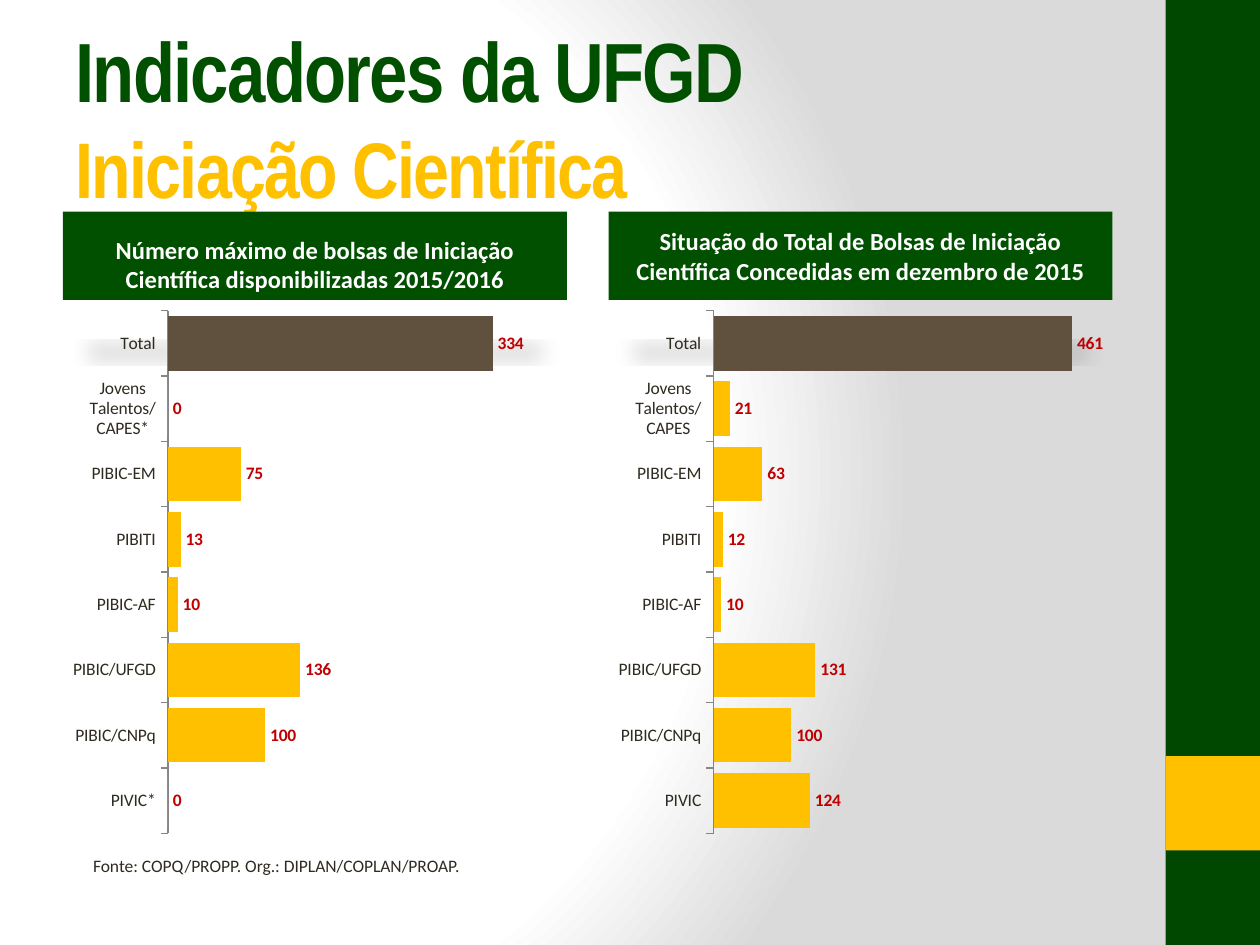
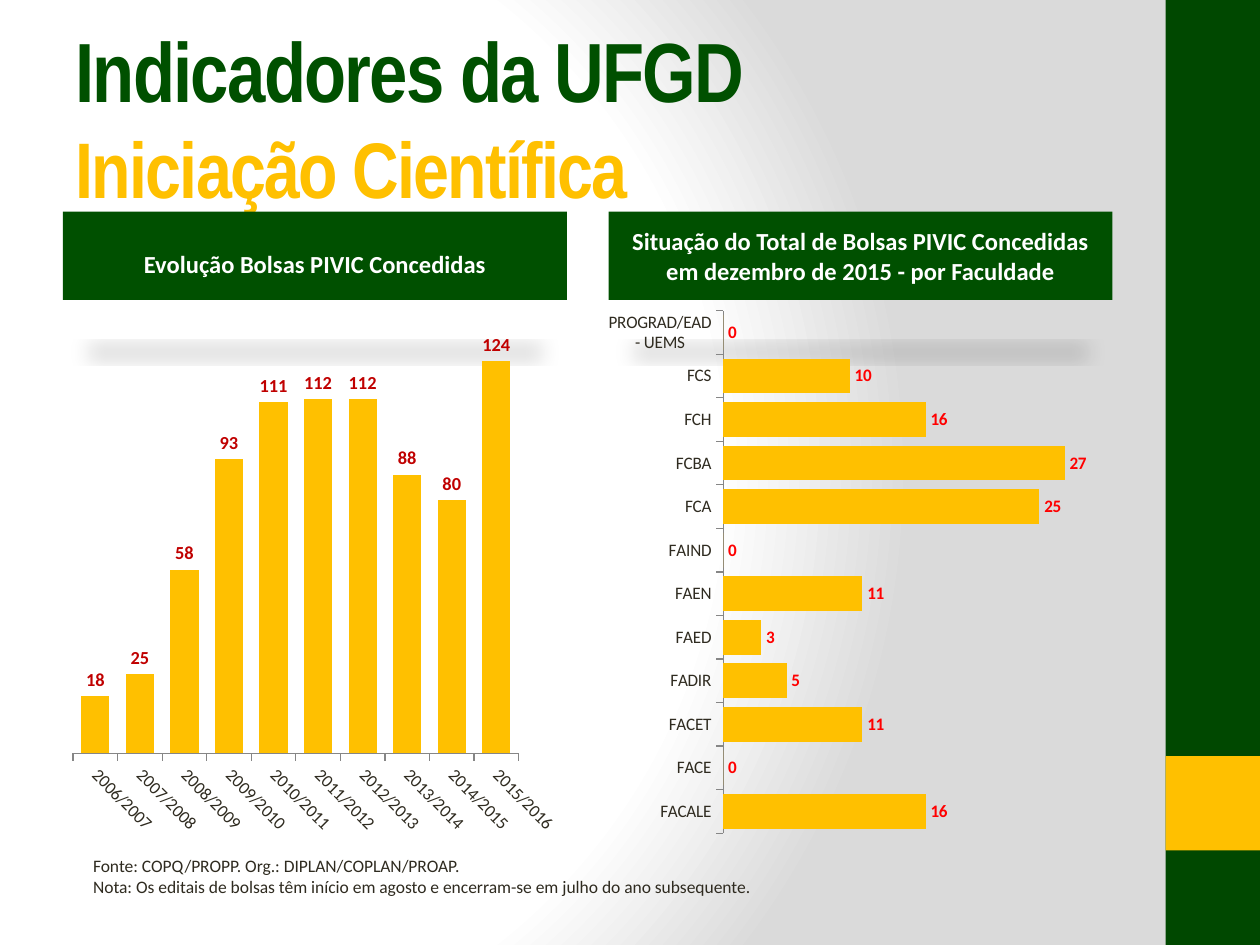
from lxml import etree
from pptx import Presentation
from pptx.chart.data import CategoryChartData as ChartData
from pptx.dml.color import RGBColor
from pptx.enum.chart import XL_CHART_TYPE as Kind, XL_LABEL_POSITION as Spot, XL_TICK_MARK as Tick
from pptx.enum.shapes import MSO_SHAPE as Preset
from pptx.enum.text import MSO_ANCHOR as Anchor, MSO_AUTO_SIZE as Fit, PP_ALIGN as Align
from pptx.oxml import parse_xml
from pptx.oxml.ns import nsdecls, qn
from pptx.util import Inches, Pt

# Colours and fonts
EDGE = RGBColor(0x00, 0x48, 0x00)
GREEN = RGBColor(0x00, 0x50, 0x00)
GOLD = RGBColor(0xFF, 0xC0, 0x00)
BROWN = RGBColor(0x5F, 0x51, 0x3E)
INK = RGBColor(0x2F, 0x2B, 0x20)
GREY = RGBColor(0x86, 0x86, 0x86)
WHITE = RGBColor(0xFF, 0xFF, 0xFF)
WINE = RGBColor(0xC0, 0x00, 0x00)
RED = RGBColor(0xFF, 0x00, 0x00)
HEAD, BODY = "Arial Narrow", "Calibri"

# Shared grid, in inches
LEFT, RIGHT = 0.5, 4.83
TOP, WIDE, BAND, PLOT = 1.68, 4, 0.7, 4.32

SOURCE = "Fonte: COPQ/PROPP. Org.: DIPLAN/COPLAN/PROAP."
NOTE = "Nota: Os editais de bolsas têm início em agosto e encerram-se em julho do ano subsequente."

GRAD = f"""<a:gradFill {nsdecls('a')} rotWithShape="1"><a:gsLst>
<a:gs pos="0"><a:srgbClr val="FFFFFF"/></a:gs>
<a:gs pos="75000"><a:srgbClr val="FFFFFF"/></a:gs>
<a:gs pos="100000"><a:srgbClr val="DADADA"/></a:gs></a:gsLst>
<a:path path="circle"><a:fillToRect l="20000" t="50000" r="100000" b="50000"/></a:path>
</a:gradFill>"""
SHADOW = f"""<a:outerShdw {nsdecls('a')} blurRad="152400" dist="317500" dir="5400000"
sx="90000" sy="-19000" rotWithShape="0"><a:srgbClr val="000000"><a:alpha val="15000"/></a:srgbClr>
</a:outerShdw>"""


def style(font, size, color, bold=False, name=BODY):
    font.size, font.bold, font.name = Pt(size), bold, name
    font.color.rgb = color


def add_run(para, text, *look, **more):
    run = para.add_run()
    run.text = text
    style(run.font, *look, **more)
    return run


def add_rect(slide, box, color):
    rect = slide.shapes.add_shape(Preset.RECTANGLE, *map(Inches, box))
    rect.fill.solid()
    rect.fill.fore_color.rgb = color
    rect.line.fill.background()
    rect.shadow.inherit = False
    return rect


def set_master(deck, slide):
    """Give the master its background and side strip."""
    master = deck.slide_master
    master.background.fill.gradient()
    old = master.element.find(".//" + qn("a:gradFill"))
    old.getparent().replace(old, parse_xml(GRAD))
    strip = [((9.25, 0, 0.75, 7.5), EDGE), ((9.25, 6, 0.75, 0.75), GOLD)]
    for pos, (box, color) in enumerate(strip):
        rect = add_rect(slide, box, color).element
        rect.nvSpPr.cNvPr.set("id", str(100 + pos))
        master.shapes.element.insert(2 + pos, rect)


def add_title(slide):
    title = slide.shapes.title
    title.left, title.top, title.width, title.height = map(Inches, (LEFT, 0.3, 8.33, 1.25))
    frame = title.text_frame
    frame.auto_size, frame.word_wrap = Fit.NONE, True
    frame.vertical_anchor = Anchor.MIDDLE
    para = frame.paragraphs[0]
    para.alignment = Align.LEFT
    first = add_run(para, "Indicadores da UFGD", 48, GREEN, True, HEAD)
    para.add_line_break()
    second = add_run(para, "Iniciação Científica", 45, GOLD, True, HEAD)
    for run in (first, second):
        run.font._element.set("spc", "-100")


def add_band(slide, left, text, anchor, foot):
    band = add_rect(slide, (left, TOP, WIDE, BAND), GREEN)
    band.element.spPr.find(qn("a:effectLst")).append(parse_xml(SHADOW))
    frame = band.text_frame
    frame.word_wrap, frame.vertical_anchor = True, anchor
    frame.margin_bottom = Inches(foot)
    para = frame.paragraphs[0]
    para.alignment, para.space_before = Align.CENTER, Pt(2.8)
    add_run(para, text, 14, WHITE, True)


def add_plot(slide, left, cats, vals, gap, kind=Kind.BAR_CLUSTERED,
             size=10, color=WINE, total=False, tilt=0):
    data = ChartData()
    data.categories = cats
    data.add_series("Series 1", vals)
    box = map(Inches, (left, TOP + BAND, WIDE, PLOT))
    chart = slide.shapes.add_chart(kind, *box, data).chart
    chart.has_legend = chart.has_title = False
    style(chart.font, 10, INK)

    # Axes
    axis = chart.category_axis
    axis.has_major_gridlines = False
    axis.major_tick_mark = Tick.OUTSIDE
    axis.format.line.color.rgb = GREY
    style(axis.tick_labels.font, 10, INK)
    if tilt:
        frame = chart.element.find(f".//{qn('c:catAx')}/{qn('c:txPr')}/{qn('a:bodyPr')}")
        frame.set("rot", str(tilt * 60000))
        frame.set("vert", "horz")
    chart.value_axis.has_major_gridlines = False
    chart.value_axis.minimum_scale = 0
    chart.value_axis.visible = False

    # Bars and their labels
    plot = chart.plots[0]
    plot.gap_width, plot.vary_by_categories = gap, False
    bars = plot.series[0]
    bars.invert_if_negative = False
    bars.format.fill.solid()
    bars.format.fill.fore_color.rgb = GOLD
    if total:
        fill = bars.points[len(vals) - 1].format.fill
        fill.solid()
        fill.fore_color.rgb = BROWN
    labels = bars.data_labels
    labels.show_value, labels.position = True, Spot.OUTSIDE_END
    style(labels.font, size, color, True)


def add_foot(slide, lines):
    height = 0.1 + 0.17 * len(lines)
    frame = slide.shapes.add_textbox(*map(Inches, (0.64, 6.74, 8.38, height))).text_frame
    frame.word_wrap = True
    for pos, line in enumerate(lines):
        para = frame.add_paragraph() if pos else frame.paragraphs[0]
        add_run(para, line, 10, INK)


def add_page(slide, heads, plots, notes):
    """Place the title, two headed charts and the source lines."""
    add_title(slide)
    (text, foot), right = heads
    add_band(slide, LEFT, text, Anchor.BOTTOM, foot)
    add_band(slide, RIGHT, right, Anchor.MIDDLE, 0.05)
    add_foot(slide, notes)
    for left, plot in zip((LEFT, RIGHT), plots):
        add_plot(slide, left, **plot)


def grants(mark, vals):
    """Chart of grants by programme; mark flags the programmes with a star."""
    cats = ["PIVIC" + mark, "PIBIC/CNPq", "PIBIC/UFGD", "PIBIC-AF", "PIBITI",
            "PIBIC-EM", "Jovens Talentos/CAPES" + mark, "Total"]
    return dict(cats=cats, vals=vals, gap=20, total=True)


def main():
    deck = Presentation()
    deck.slide_width, deck.slide_height = Inches(10), Inches(7.5)
    first, second = (deck.slides.add_slide(deck.slide_layouts[5]) for _ in range(2))
    set_master(deck, first)

    # Grants offered and granted
    add_page(
        first,
        [("Número máximo de bolsas de Iniciação Científica disponibilizadas 2015/2016", 0.05),
         "Situação do Total de Bolsas de Iniciação Científica Concedidas em dezembro de 2015"],
        [grants("*", [0, 100, 136, 10, 13, 75, 0, 334]),
         grants("", [124, 100, 131, 10, 12, 63, 21, 461])],
        [SOURCE])

    # PIVIC grants by year and by faculty
    years = dict(cats=[f"{year}/{year + 1}" for year in range(2006, 2016)],
                 vals=[18, 25, 58, 93, 111, 112, 112, 88, 80, 124],
                 gap=58, kind=Kind.COLUMN_CLUSTERED, size=10.5, tilt=45)
    schools = dict(cats=["FACALE", "FACE", "FACET", "FADIR", "FAED", "FAEN", "FAIND",
                         "FCA", "FCBA", "FCH", "FCS", "PROGRAD/EAD - UEMS"],
                   vals=[16, 0, 11, 5, 3, 11, 0, 25, 27, 16, 10, 0], gap=25, color=RED)
    add_page(
        second,
        [("Evolução Bolsas PIVIC Concedidas", 0.17),
         "Situação do Total de Bolsas PIVIC Concedidas em dezembro de 2015 - por Faculdade"],
        [years, schools], [SOURCE, NOTE])
    deck.save("out.pptx")


if __name__ == "__main__":
    main()
